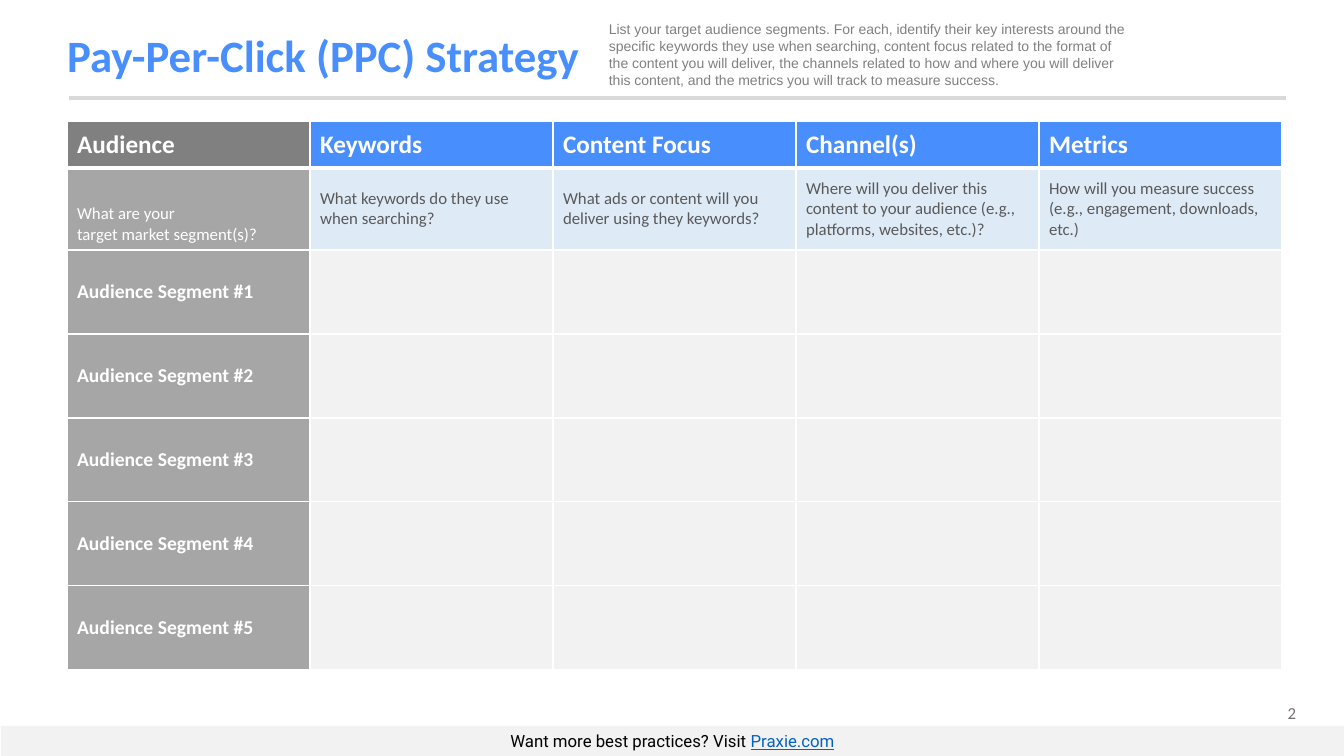
from lxml import etree
from pptx import Presentation
from pptx.dml.color import RGBColor
from pptx.enum import shapes, text
from pptx.oxml import ns
from pptx.util import Emu, Pt

PX = 914400 / 100.8
COLORS = {
    "white": "FFFFFF", "black": "000000", "blue": "488EFD", "pale_blue": "DEEBF7",
    "gray": "808080", "mid_gray": "A6A6A6", "rule": "D9D9D9", "pale_gray": "F2F2F2",
    "body": "595959", "number": "767171", "link": "0563C1",
}
INTRO = (
    "List your target audience segments. For each, identify their key interests around "
    "the specific keywords they use when searching, content focus related to the format "
    "of the content you will deliver, the channels related to how and where you will "
    "deliver this content, and the metrics you will track to measure success."
)
HEADERS = ["Audience", "Keywords", "Content Focus", "Channel(s)", "Metrics"]
QUESTIONS = [
    "What are your\ntarget market segment(s)?",
    "What keywords do they use when searching?",
    "What ads or content will you deliver using they keywords?",
    "Where will you deliver this content to your audience (e.g., platforms, websites, etc.)?",
    "How will you measure success (e.g., engagement, downloads, etc.)",
]
SEGMENTS = 5
MIDDLE = text.MSO_ANCHOR.MIDDLE


def px(*lengths):
    return [Emu(round(n * PX)) for n in lengths]


def rgb(name):
    return RGBColor.from_string(COLORS[name])


def write(p, words, size=12, font="Calibri", color="black", bold=False, underline=False):
    """Add one formatted run to a paragraph."""
    r = p.add_run()
    r.text = words
    f = r.font
    f.size, f.name, f.bold, f.underline = Pt(size), font, bold, underline
    f.color.rgb = rgb(color)


def fill_solid(target, color):
    target.fill.solid()
    target.fill.fore_color.rgb = rgb(color)


def add_text(slide, box, words, align=text.PP_ALIGN.LEFT, **fmt):
    tf = slide.shapes.add_textbox(*px(*box)).text_frame
    tf.word_wrap = True
    tf.paragraphs[0].alignment = align
    write(tf.paragraphs[0], words, **fmt)


def add_title(slide, box, words):
    sp = slide.shapes.title
    sp.left, sp.top, sp.width, sp.height = px(*box)
    tf = sp.text_frame
    tf.auto_size = text.MSO_AUTO_SIZE.NONE
    tf.vertical_anchor = MIDDLE
    p = tf.paragraphs[0]
    p.alignment, p.line_spacing = text.PP_ALIGN.LEFT, 0.9
    write(p, words, size=32, color="blue", bold=True)


def add_rule(slide, x1, y1, x2, y2):
    line = slide.shapes.add_connector(shapes.MSO_CONNECTOR.STRAIGHT, *px(x1, y1, x2, y2))
    line.line.color.rgb = rgb("rule")
    line.line.width = Pt(3)
    etree.SubElement(line._element.spPr, ns.qn("a:effectLst"))


def add_footer(slide, box):
    sp = slide.shapes.add_shape(shapes.MSO_SHAPE.RECTANGLE, *px(*box))
    sp.shadow.inherit = False
    fill_solid(sp, "pale_gray")
    sp.line.fill.background()
    sp.text_frame.vertical_anchor = MIDDLE
    p = sp.text_frame.paragraphs[0]
    p.alignment = text.PP_ALIGN.CENTER
    write(p, "Want more best practices? Visit ", font="Roboto")
    write(p, "Praxie.com", font="Roboto", color="link", underline=True)


def set_borders(cell, top=1, bottom=1):
    """Draw white cell borders; widths are in points."""
    tc_pr = cell._tc.get_or_add_tcPr()
    widths = {"lnL": 1, "lnR": 1, "lnT": top, "lnB": bottom}
    for i, (side, width) in enumerate(widths.items()):
        ln = etree.Element(ns.qn(f"a:{side}"), w=str(Pt(width)))
        solid = etree.SubElement(ln, ns.qn("a:solidFill"))
        etree.SubElement(solid, ns.qn("a:srgbClr"), val=COLORS["white"])
        tc_pr.insert(i, ln)


def fill_cell(cell, words, fill, anchor=MIDDLE, top=1, bottom=1, **fmt):
    fill_solid(cell, fill)
    set_borders(cell, top, bottom)
    cell.vertical_anchor = anchor
    tf = cell.text_frame
    for i, line in enumerate(words.split("\n") if words else []):
        write(tf.add_paragraph() if i else tf.paragraphs[0], line, **fmt)


def add_strategy_table(slide, left, top, col_width, row_heights):
    rows, cols = len(row_heights), len(HEADERS)
    box = px(left, top, col_width * cols, sum(row_heights))
    table = slide.shapes.add_table(rows, cols, *box).table
    for row, height in zip(table.rows, px(*row_heights)):
        row.height = height
    for c, (header, question) in enumerate(zip(HEADERS, QUESTIONS)):
        table.columns[c].width = px(col_width)[0]
        first = c == 0
        fill_cell(table.cell(0, c), header, "gray" if first else "blue",
                  bottom=3, size=18, color="white", bold=True)
        fill_cell(table.cell(1, c), question, "mid_gray" if first else "pale_blue",
                  anchor=text.MSO_ANCHOR.BOTTOM if first else MIDDLE,
                  top=3, color="white" if first else "body")
        for n in range(1, SEGMENTS + 1):
            fill_cell(table.cell(n + 1, c), f"Audience Segment #{n}" if first else "",
                      "mid_gray" if first else "pale_gray",
                      size=14, color="white", bold=True)


def main():
    prs = Presentation()
    prs.slide_width, prs.slide_height = px(1344, 756)
    slide = prs.slides.add_slide(prs.slide_layouts[5])
    add_text(slide, (1203, 698, 103, 30), "2", align=text.PP_ALIGN.RIGHT, color="number")
    add_rule(slide, 69, 98, 1286, 98)
    add_title(slide, (57, 19, 1103, 78), "Pay-Per-Click (PPC) Strategy")
    add_footer(slide, (1, 726, 1343, 30))
    add_strategy_table(slide, 67, 121, 243, [47, 82] + [84] * SEGMENTS)
    add_text(slide, (599, 16, 542, 78), INTRO, size=10, font="Arial", color="gray")
    prs.save("out.pptx")


if __name__ == "__main__":
    main()
